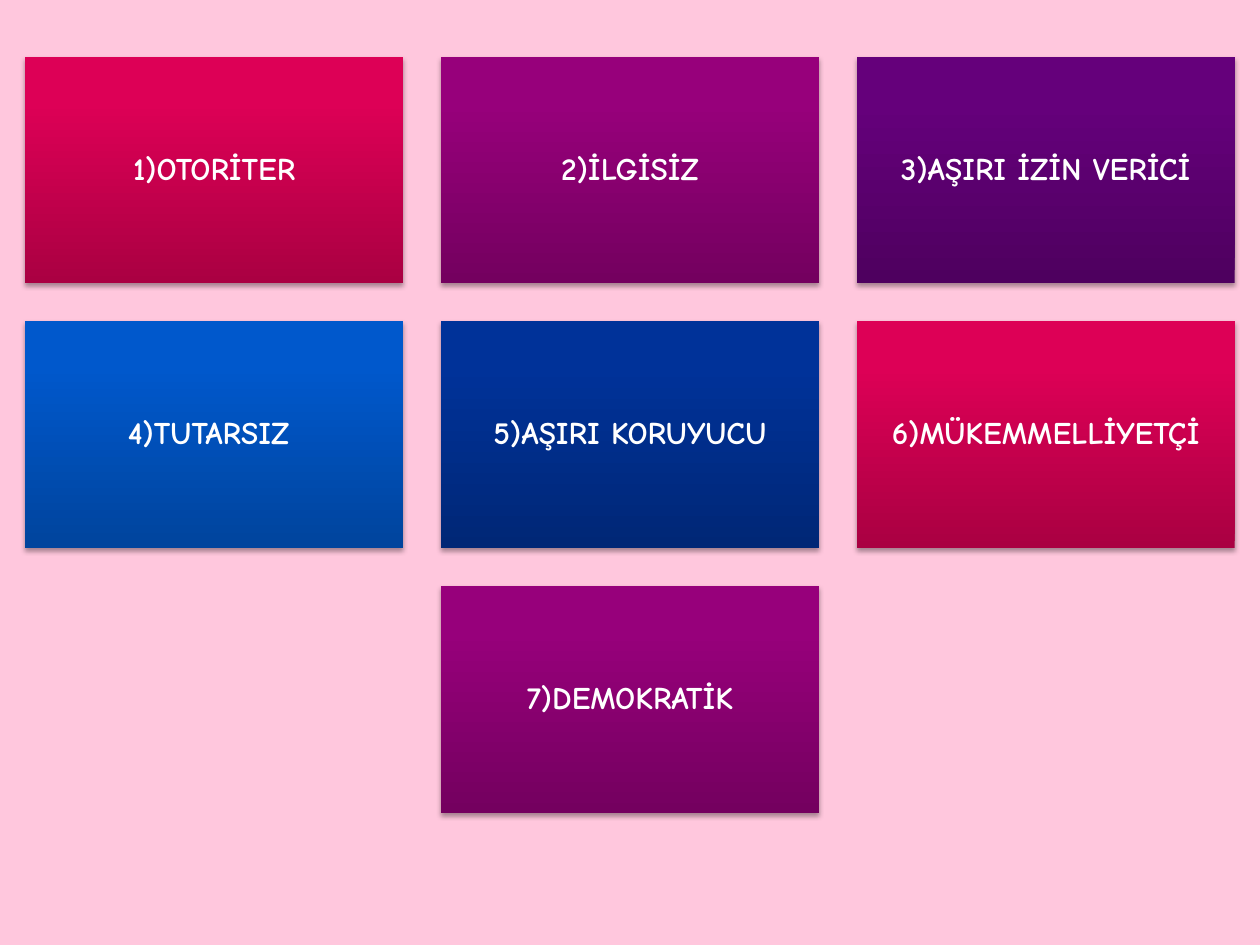
from copy import deepcopy
from dataclasses import dataclass

from lxml import etree
from pptx import Presentation
from pptx.dml.color import RGBColor
from pptx.enum import shapes, text
from pptx.oxml import ns
from pptx.util import Inches, Pt


@dataclass(frozen=True)
class Theme:
    background: str = "FFC7DD"
    label: str = "FFFFFF"
    shadow: str = "000000"
    font: str = "Comic Neue"
    label_size: float = 18
    stops: tuple = (0, 0.8, 1)
    gradients: tuple = (
        ("AA0042", "DD0056", "DE0057"),
        ("74005F", "97007B", "98007C"),
        ("4E005F", "65007B", "65007C"),
        ("00449D", "0058CC", "0059CD"),
        ("002776", "003299", "00339A"),
    )


THEME = Theme()
STYLES = (
    "1)OTORİTER",
    "2)İLGİSİZ",
    "3)AŞIRI İZİN VERİCİ",
    "4)TUTARSIZ ",
    "5)AŞIRI KORUYUCU",
    "6)MÜKEMMELLİYETÇİ",
    "7)DEMOKRATİK",
)
COLUMNS = 3
CARD_WIDTH, CARD_HEIGHT, GAP = 3, 1.8, 0.3
SLIDE_WIDTH, SLIDE_HEIGHT, TOP = 10, 7.5, 0.45


def paint_gradient(card, colors):
    card.fill.gradient()
    card.fill.gradient_angle = 90
    stop_list = card._element.spPr.find(".//" + ns.qn("a:gsLst"))
    stop_list.append(deepcopy(stop_list[-1]))
    for stop, position, color in zip(card.fill.gradient_stops, THEME.stops, colors):
        stop.position = position
        stop.color.rgb = RGBColor.from_string(color)


def cast_shadow(card):
    card.shadow.inherit = False
    effects = card._element.spPr.find(ns.qn("a:effectLst"))
    shadow = etree.SubElement(
        effects, ns.qn("a:outerShdw"), blurRad=str(Pt(3.1)), dist=str(Pt(1.8)),
        dir="5400000", rotWithShape="0")
    color = etree.SubElement(shadow, ns.qn("a:srgbClr"), val=THEME.shadow)
    etree.SubElement(color, ns.qn("a:alpha"), val="35000")


def write_label(card, wording):
    frame = card.text_frame
    frame.word_wrap = True
    frame.vertical_anchor = text.MSO_ANCHOR.MIDDLE
    frame.margin_left = frame.margin_right = Inches(0.07)
    frame.margin_top = frame.margin_bottom = Inches(0.07)
    paragraph = frame.paragraphs[0]
    paragraph.alignment = text.PP_ALIGN.CENTER
    paragraph.line_spacing = 0.9
    paragraph.space_after = Pt(0.35 * THEME.label_size)
    run = paragraph.add_run()
    run.text = wording
    run.font.name = THEME.font
    run.font.size = Pt(THEME.label_size)
    run.font.bold = True
    run.font.color.rgb = RGBColor.from_string(THEME.label)


def add_card(slide, left, top, wording, colors):
    card = slide.shapes.add_shape(
        shapes.MSO_SHAPE.RECTANGLE, Inches(left), Inches(top),
        Inches(CARD_WIDTH), Inches(CARD_HEIGHT))
    paint_gradient(card, colors)
    card.line.fill.background()
    cast_shadow(card)
    write_label(card, wording)


def add_card_grid(slide):
    for index, wording in enumerate(STYLES):
        row, column = divmod(index, COLUMNS)
        in_row = min(COLUMNS, len(STYLES) - row * COLUMNS)
        row_width = in_row * (CARD_WIDTH + GAP) - GAP
        left = (SLIDE_WIDTH - row_width) / 2 + column * (CARD_WIDTH + GAP)
        top = TOP + row * (CARD_HEIGHT + GAP)
        colors = THEME.gradients[index % len(THEME.gradients)]
        add_card(slide, left, top, wording, colors)


def main():
    deck = Presentation()
    deck.slide_width = Inches(SLIDE_WIDTH)
    deck.slide_height = Inches(SLIDE_HEIGHT)
    slide = deck.slides.add_slide(deck.slide_layouts[6])
    slide.background.fill.solid()
    slide.background.fill.fore_color.rgb = RGBColor.from_string(THEME.background)
    add_card_grid(slide)
    deck.save("out.pptx")


if __name__ == "__main__":
    main()
